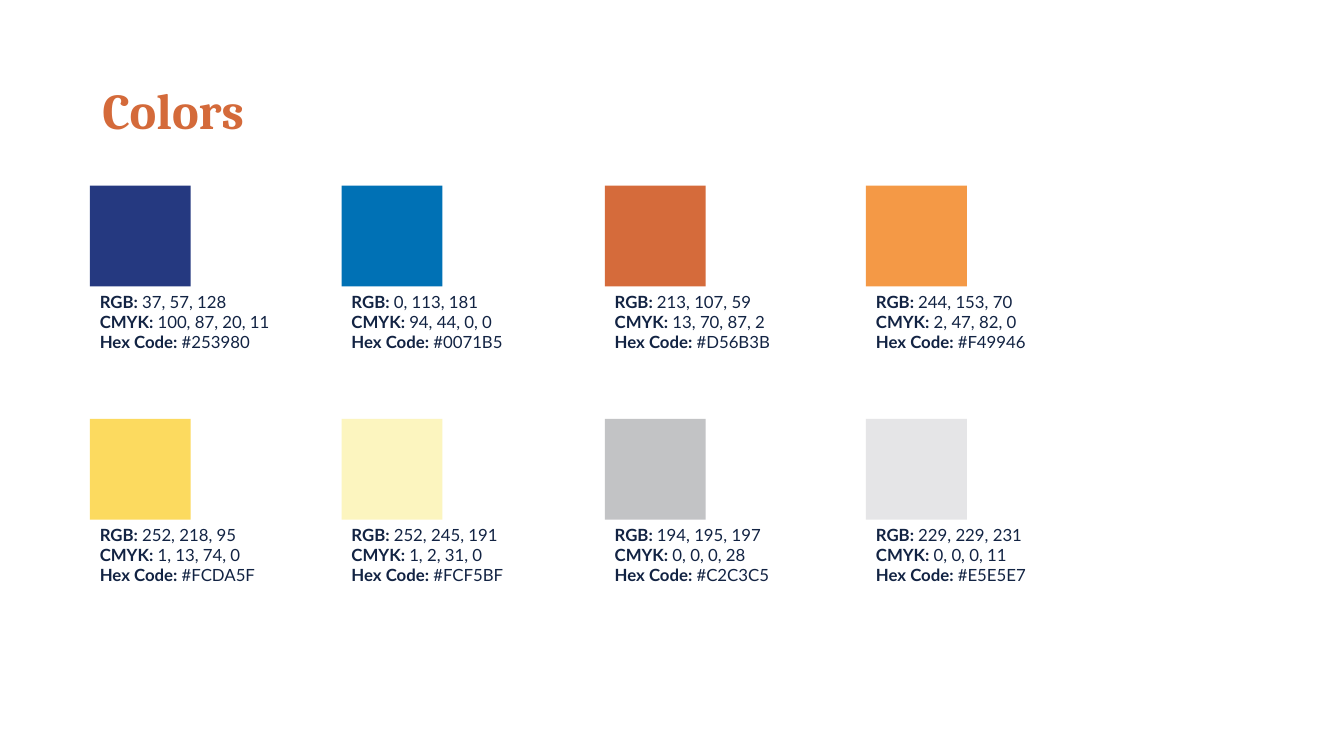
from pptx import Presentation
from pptx.dml.color import RGBColor
from pptx.enum import shapes, text
from pptx.util import Pt

TITLE = "Colors"
SWATCHES = [
    # RGB, CMYK, hex code
    ("37, 57, 128", "100, 87, 20, 11", "#253980"),
    ("0, 113, 181", "94, 44, 0, 0", "#0071B5"),
    ("213, 107, 59", "13, 70, 87, 2", "#D56B3B"),
    ("244, 153, 70", "2, 47, 82, 0", "#F49946"),
    ("252, 218, 95", "1, 13, 74, 0", "#FCDA5F"),
    ("252, 245, 191", "1, 2, 31, 0", "#FCF5BF"),
    ("194, 195, 197", "0, 0, 0, 28", "#C2C3C5"),
    ("229, 229, 231", "0, 0, 0, 11", "#E5E5E7"),
]
LABELS = ("RGB:", "CMYK:", "Hex Code:")

THEME = {
    "title": {"font": "Cambria", "size": 36, "color": "D46A3A"},
    "body": {"font": "Lato", "size": 12, "color": "122343"},
}

PAGE_SIZE = (960, 540)
TITLE_BOX = (66, 29, 828, 104)
COLUMNS = (64.2, 244, 432, 618.6)
ROWS = (132.7, 299.2)
SWATCH_SIZE = 72
CAPTION_SIZE = (172, 51)


def add_span(para, wording, style, bold):
    span = para.add_run()
    span.text = wording
    span.font.name = style["font"]
    span.font.size = Pt(style["size"])
    span.font.bold = bold
    span.font.color.rgb = RGBColor.from_string(style["color"])


def add_box(page, left, top, width, height):
    box = page.shapes.add_textbox(Pt(left), Pt(top), Pt(width), Pt(height))
    box.text_frame.word_wrap = True
    return box.text_frame


def add_title(page):
    frame = add_box(page, *TITLE_BOX)
    frame.vertical_anchor = text.MSO_ANCHOR.MIDDLE
    para = frame.paragraphs[0]
    para.line_spacing = 0.9
    add_span(para, TITLE, THEME["title"], True)


def add_swatch(page, left, top, values):
    """Draw a color square with its three color codes below it."""
    square = page.shapes.add_shape(
        shapes.MSO_SHAPE.RECTANGLE,
        Pt(left), Pt(top), Pt(SWATCH_SIZE), Pt(SWATCH_SIZE))
    square.shadow.inherit = False
    square.fill.solid()
    square.fill.fore_color.rgb = RGBColor.from_string(values[-1].lstrip("#"))
    square.line.fill.background()

    frame = add_box(page, left, top + SWATCH_SIZE, *CAPTION_SIZE)
    frame.auto_size = text.MSO_AUTO_SIZE.SHAPE_TO_FIT_TEXT
    for index, (label, value) in enumerate(zip(LABELS, values)):
        para = frame.add_paragraph() if index else frame.paragraphs[0]
        add_span(para, label + " ", THEME["body"], True)
        add_span(para, value, THEME["body"], False)


def main():
    deck = Presentation()
    deck.slide_width, deck.slide_height = map(Pt, PAGE_SIZE)
    page = deck.slides.add_slide(deck.slide_layouts[6])
    add_title(page)
    for index, values in enumerate(SWATCHES):
        row, column = divmod(index, len(COLUMNS))
        add_swatch(page, COLUMNS[column], ROWS[row], values)
    deck.save("out.pptx")


if __name__ == "__main__":
    main()
